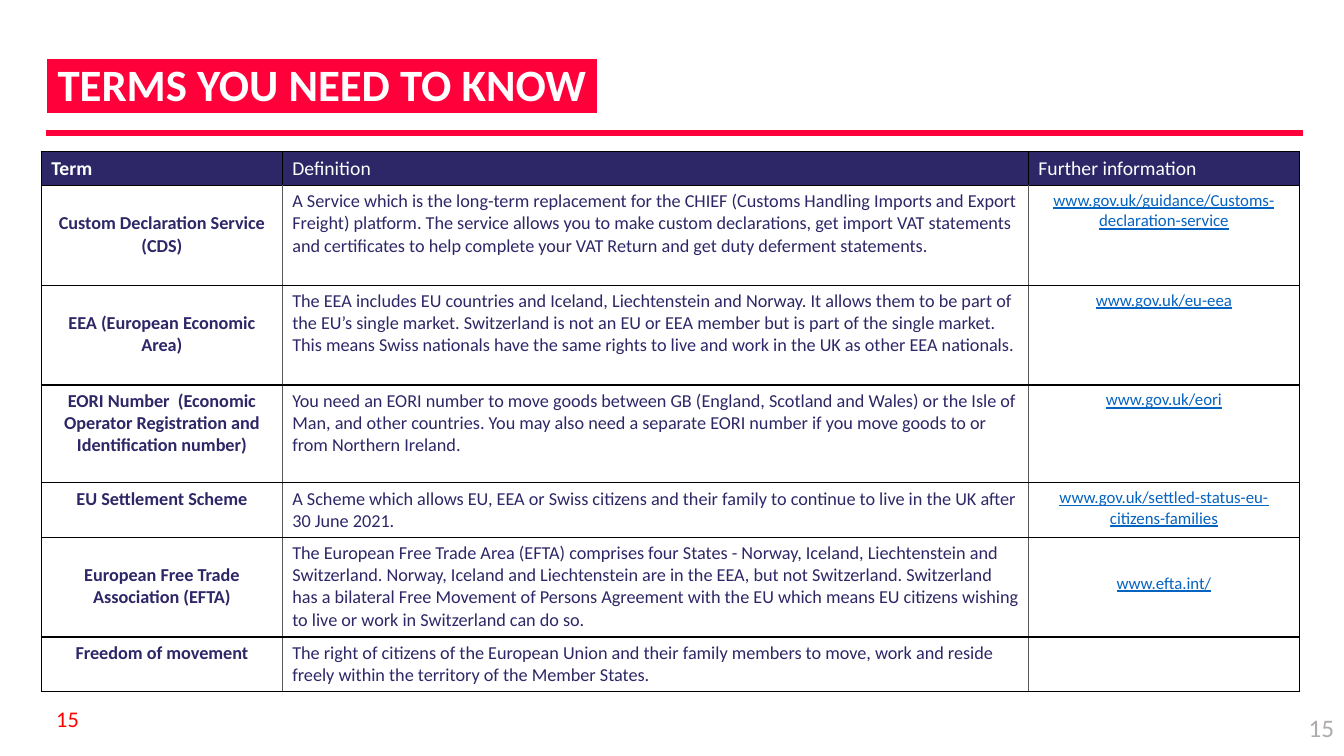
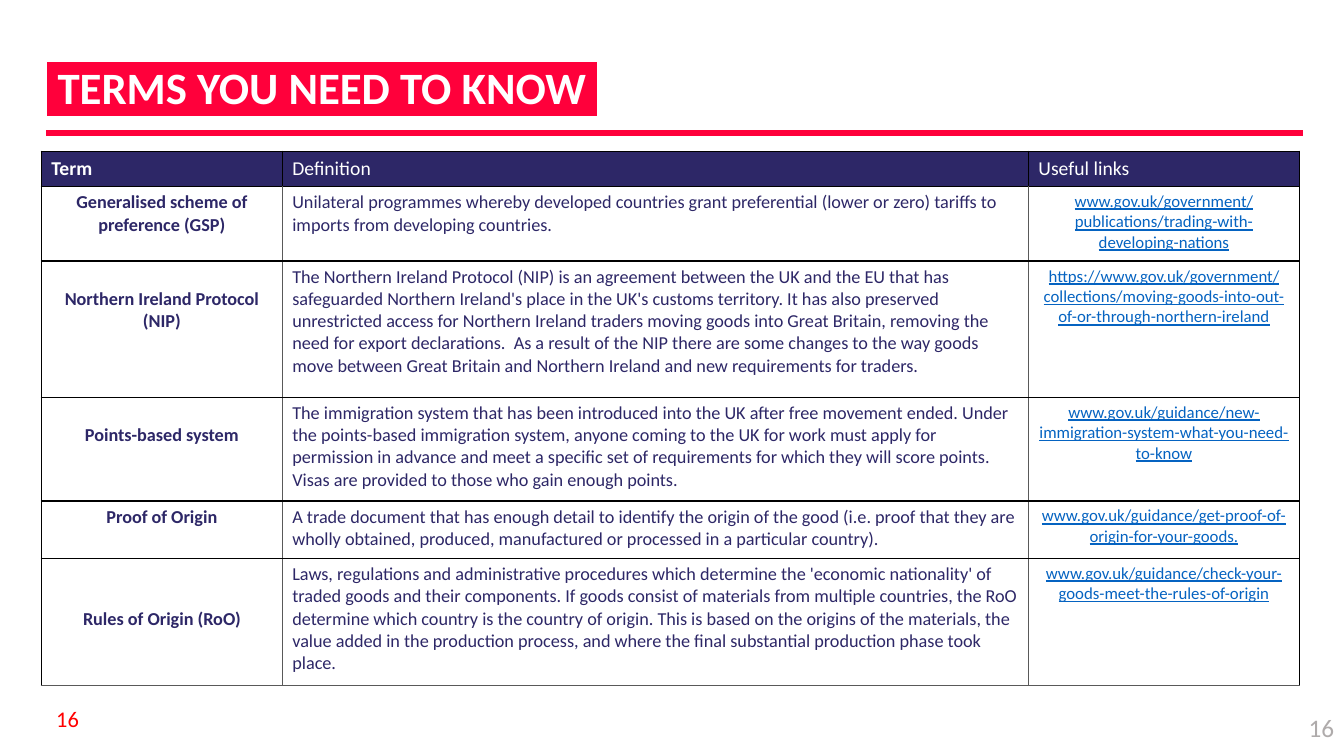
from dataclasses import dataclass
from typing import Any

from lxml.etree import Element, SubElement
from pptx import Presentation
from pptx.dml.color import RGBColor
from pptx.enum.shapes import MSO_CONNECTOR
from pptx.enum.text import MSO_ANCHOR, MSO_AUTO_SIZE, PP_ALIGN
from pptx.oxml.ns import qn
from pptx.util import Emu, Pt

PX = 9144  # 100 px to the inch

RED = "FF003B"
NAVY = "2D2767"
WHITE = "FFFFFF"
BLACK = "000000"
GREY = "595959"

TITLE = "TERMS YOU NEED TO KNOW"
TABLE_LEFT, TABLE_TOP = 41, 150
COLUMN_WIDTHS = (239, 740, 269)
CELL_MARGIN = 5
TERM_LINE = 22
LINK_LINE = 31

TITLE_FONT = {"size": 32, "bold": True, "color": WHITE}
HEADER_FONT = {"size": 14, "bold": False, "color": WHITE}
TERM_FONT = {"size": 13, "bold": True, "color": NAVY}
DEFINITION_FONT = {"size": 13, "bold": False, "color": NAVY}
LINK_FONT = {"size": 12, "bold": False, "underline": True, "color": "0563C1"}

THICK = (BLACK, 1)
THIN = (GREY, 0.5)


@dataclass(frozen=True)
class Entry:
    """One glossary row; drops count the lines a text sits below the top."""
    height: int
    term: str
    definition: str
    link: str = ""
    term_drop: int = 0
    link_drop: int = 0


@dataclass(frozen=True)
class GlossaryPage:
    number: int
    title_top: int
    link_heading: str
    header_height: int
    bottom_border: tuple[str, float]
    entries: tuple[Entry, ...]


@dataclass(frozen=True)
class PageNumber:
    left: int
    top: int
    align: PP_ALIGN
    font: dict[str, Any]


PAGE_NUMBERS = (
    PageNumber(1033, 702, PP_ALIGN.RIGHT, {"size": 18, "color": "AFABAB"}),
    PageNumber(46, 695, PP_ALIGN.LEFT, {"size": 16, "color": "FF0000"}),
)

PAGES = (
    GlossaryPage(15, 54, "Further information", 34, THICK, (
        Entry(
            99, "Custom Declaration Service (CDS)",
            "A Service which is the long-term replacement for the CHIEF (Customs Handling "
            "Imports and Export Freight) platform. The service allows you to make custom "
            "declarations, get import VAT statements and certificates to help complete your "
            "VAT Return and get duty deferment statements.",
            "www.gov.uk/guidance/Customs-declaration-service", term_drop=1),
        Entry(
            99, "EEA (European Economic Area)",
            "The EEA includes EU countries and Iceland, Liechtenstein and Norway. It allows "
            "them to be part of the EU’s single market. Switzerland is not an EU or EEA "
            "member but is part of the single market. This means Swiss nationals have the "
            "same rights to live and work in the UK as other EEA nationals.",
            "www.gov.uk/eu-eea", term_drop=1),
        Entry(
            97, "EORI Number  (Economic Operator Registration and Identification number)",
            "You need an EORI number to move goods between GB (England, Scotland and Wales) "
            "or the Isle of Man, and other countries. You may also need a separate EORI "
            "number if you move goods to or from Northern Ireland.",
            "www.gov.uk/eori"),
        Entry(
            54, "EU Settlement Scheme",
            "A Scheme which allows EU, EEA or Swiss citizens and their family to continue "
            "to live in the UK after 30 June 2021.",
            "www.gov.uk/settled-status-eu-citizens-families"),
        Entry(
            99, "European Free Trade Association (EFTA)",
            "The European Free Trade Area (EFTA) comprises four States - Norway, Iceland, "
            "Liechtenstein and Switzerland. Norway, Iceland and Liechtenstein are in the "
            "EEA, but not Switzerland. Switzerland has a bilateral Free Movement of Persons "
            "Agreement with the EU which means EU citizens wishing to live or work in "
            "Switzerland can do so.",
            "www.efta.int/", term_drop=1, link_drop=1),
        Entry(
            54, "Freedom of movement",
            "The right of citizens of the European Union and their family members to move, "
            "work and reside freely within the territory of the Member States."),
    )),
    GlossaryPage(16, 57, "Useful links", 35, THIN, (
        Entry(
            74, "Generalised scheme of preference (GSP)",
            "Unilateral programmes whereby developed countries grant preferential (lower or "
            "zero) tariffs to imports from developing countries.",
            "www.gov.uk/government/publications/trading-with-developing-nations"),
        Entry(
            135, "Northern Ireland Protocol (NIP)",
            "The Northern Ireland Protocol (NIP) is an agreement between the UK and the EU "
            "that has safeguarded Northern Ireland's place in the UK's customs territory. "
            "It has also preserved unrestricted access for Northern Ireland traders moving "
            "goods into Great Britain, removing the need for export declarations.  As a "
            "result of the NIP there are some changes to the way goods move between Great "
            "Britain and Northern Ireland and new requirements for traders.",
            "https://www.gov.uk/government/collections/"
            "moving-goods-into-out-of-or-through-northern-ireland", term_drop=1),
        Entry(
            103, "Points-based system",
            "The immigration system that has been introduced into the UK after free "
            "movement ended. Under the points-based immigration system, anyone coming to "
            "the UK for work must apply for permission in advance and meet a specific set "
            "of requirements for which they will score points. Visas are provided to those "
            "who gain enough points.",
            "www.gov.uk/guidance/new-immigration-system-what-you-need-to-know", term_drop=1),
        Entry(
            57, "Proof of Origin",
            "A trade document that has enough detail to identify the origin of the good "
            "(i.e. proof that they are wholly obtained, produced, manufactured or processed "
            "in a particular country).",
            "www.gov.uk/guidance/get-proof-of-origin-for-your-goods."),
        Entry(
            126, "Rules of Origin (RoO)",
            "Laws, regulations and administrative procedures which determine the 'economic "
            "nationality' of traded goods and their components. If goods consist of "
            "materials from multiple countries, the RoO determine which country is the "
            "country of origin. This is based on the origins of the materials, the value "
            "added in the production process, and where the final substantial production "
            "phase took place.",
            "www.gov.uk/guidance/check-your-goods-meet-the-rules-of-origin", term_drop=2),
    )),
)


def px(length: int) -> Emu:
    return Emu(length * PX)


def rgb(value: str) -> RGBColor:
    return RGBColor.from_string(value)


def add_span(para, text: str, font: dict[str, Any]):
    span = para.add_run()
    span.text = text
    span.font.name = "Calibri"
    for name, value in font.items():
        if name == "color":
            span.font.color.rgb = rgb(value)
        else:
            setattr(span.font, name, Pt(value) if name == "size" else value)
    return span


def highlight(span, color: str) -> None:
    mark = Element(qn("a:highlight"))
    SubElement(mark, qn("a:srgbClr"), val=color)
    span._r.get_or_add_rPr().find(qn("a:solidFill")).addnext(mark)


def draw_title(page, top: int) -> None:
    box = page.shapes.title
    box.left, box.top, box.width, box.height = map(px, (37, top, 1259, 64))
    frame = box.text_frame
    frame.auto_size = MSO_AUTO_SIZE.NONE
    frame.vertical_anchor = MSO_ANCHOR.MIDDLE
    para = frame.paragraphs[0]
    para.alignment = PP_ALIGN.LEFT
    para.line_spacing = 0.9
    highlight(add_span(para, f" {TITLE} ", TITLE_FONT), RED)


def draw_rule(page) -> None:
    rule = page.shapes.add_connector(
        MSO_CONNECTOR.STRAIGHT, px(46), px(132), px(1292), px(132))
    rule.line.color.rgb = rgb(RED)
    rule.line.width = Pt(4.5)
    SubElement(rule._element.spPr, qn("a:effectLst"))


def set_borders(cell, **sides: tuple[str, float]) -> None:
    """Borders by side letter, ahead of the cell's fill as the schema asks."""
    properties = cell._tc.get_or_add_tcPr()
    for position, side in enumerate("LRTB"):
        color, width = sides[side]
        line = Element(qn(f"a:ln{side}"), w=str(Pt(width)))
        fill = SubElement(line, qn("a:solidFill"))
        SubElement(fill, qn("a:srgbClr"), val=color)
        properties.insert(position, line)


def fill_cell(cell, text: str, font: dict[str, Any],
              align: PP_ALIGN = PP_ALIGN.LEFT, drop: int = 0) -> None:
    cell.margin_top = px(CELL_MARGIN + drop)
    para = cell.text_frame.paragraphs[0]
    para.alignment = align
    if text:
        add_span(para, text, font)


def draw_table(page, content: GlossaryPage) -> None:
    heights = [content.header_height, *(entry.height for entry in content.entries)]
    table = page.shapes.add_table(
        len(heights), len(COLUMN_WIDTHS), px(TABLE_LEFT), px(TABLE_TOP),
        px(sum(COLUMN_WIDTHS)), px(sum(heights))).table
    table.horz_banding = False
    for column, width in zip(table.columns, COLUMN_WIDTHS):
        column.width = px(width)
    for row, height in zip(table.rows, heights):
        row.height = px(height)

    headings = ("Term", "Definition", content.link_heading)
    for index, heading in enumerate(headings):
        cell = table.cell(0, index)
        cell.vertical_anchor = MSO_ANCHOR.MIDDLE
        cell.fill.solid()
        cell.fill.fore_color.rgb = rgb(NAVY)
        fill_cell(cell, heading, HEADER_FONT | {"bold": index == 0})
        set_borders(cell, L=THICK, R=THICK, T=THICK, B=THICK)

    last_column = len(COLUMN_WIDTHS) - 1
    for number, entry in enumerate(content.entries, start=1):
        term, definition, link = cells = table.rows[number].cells
        fill_cell(term, entry.term, TERM_FONT, PP_ALIGN.CENTER, entry.term_drop * TERM_LINE)
        fill_cell(definition, entry.definition, DEFINITION_FONT)
        fill_cell(link, entry.link, LINK_FONT, PP_ALIGN.CENTER, entry.link_drop * LINK_LINE)
        bottom = content.bottom_border if number == len(content.entries) else THICK
        for index, cell in enumerate(cells):
            cell.fill.background()
            set_borders(cell, L=THIN if index else THICK,
                        R=THIN if index < last_column else THICK, T=THICK, B=bottom)


def draw_page_numbers(page, number: int) -> None:
    for place in PAGE_NUMBERS:
        box = page.shapes.add_textbox(px(place.left), px(place.top), px(300), px(40))
        box.text_frame.word_wrap = True
        para = box.text_frame.paragraphs[0]
        para.alignment = place.align
        add_span(para, str(number), place.font)


def main() -> None:
    deck = Presentation()
    deck.slide_width, deck.slide_height = px(1333), px(750)
    title_only = deck.slide_layouts.get_by_name("Title Only")
    for content in PAGES:
        page = deck.slides.add_slide(title_only)
        draw_rule(page)
        draw_title(page, content.title_top)
        draw_table(page, content)
        draw_page_numbers(page, content.number)
    deck.save("out.pptx")


if __name__ == "__main__":
    main()
